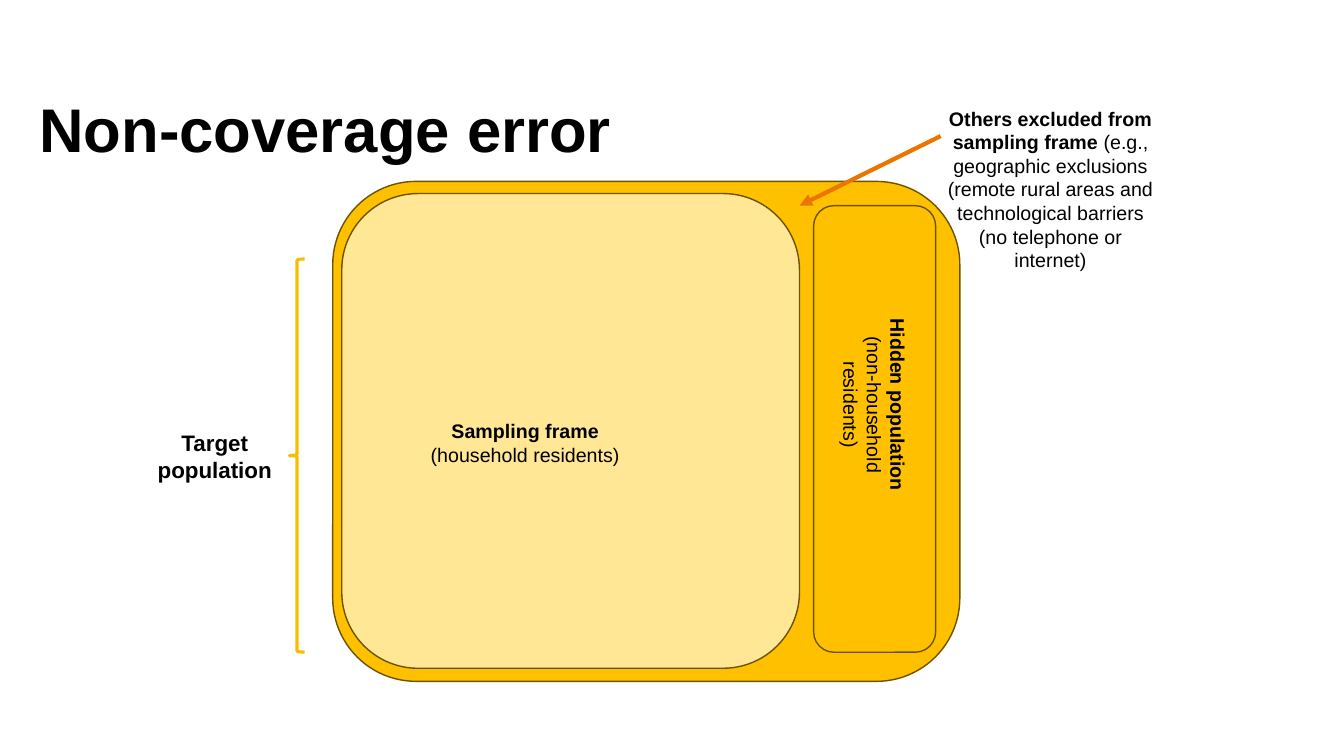
from lxml import etree
from pptx import Presentation
from pptx import util as u
from pptx.dml.color import RGBColor
from pptx.enum import shapes, text
from pptx.oxml import ns

WIDE, HIGH = u.Inches(13.33), u.Inches(7.5)
BLACK = RGBColor(0x00, 0x00, 0x00)
GOLD = RGBColor(0xFF, 0xC0, 0x00)
PALE = RGBColor(0xFF, 0xE7, 0x95)
BROWN = RGBColor(0x6C, 0x53, 0x00)
AMBER = RGBColor(0xF6, 0xBE, 0x00)
ORANGE = RGBColor(0xEA, 0x76, 0x00)
ROUND = shapes.MSO_SHAPE.ROUNDED_RECTANGLE
BRACE = shapes.MSO_SHAPE.LEFT_BRACE


def place(x, y):
    return round(WIDE * x / 100), round(HIGH * y / 100)


def box(x, y, wide, high):
    return place(x, y) + place(wide, high)


def style(font, size):
    font.name = "Arial"
    font.size = u.Pt(size)
    font.color.rgb = BLACK


def add_title(slide, words, area):
    title = slide.shapes.title
    title.left, title.top, title.width, title.height = area
    frame = title.text_frame
    frame.text = words
    frame.word_wrap = True
    frame.auto_size = text.MSO_AUTO_SIZE.NONE
    frame.vertical_anchor = text.MSO_ANCHOR.TOP
    frame.margin_left = frame.margin_right = 0
    frame.margin_top = frame.margin_bottom = 0
    para = frame.paragraphs[0]
    para.alignment = text.PP_ALIGN.LEFT
    para.line_spacing = 0.9
    style(para.font, 44)
    para.font.bold = True


def add_form(slide, kind, area, fill, line, width):
    form = slide.shapes.add_shape(kind, *area)
    form.shadow.inherit = False
    if fill is None:
        form.fill.background()
    else:
        form.fill.solid()
        form.fill.fore_color.rgb = fill
    form.line.color.rgb = line
    form.line.width = u.Pt(width)


def add_label(slide, area, head, rest="", size=14, turn=0):
    label = slide.shapes.add_textbox(*area)
    label.rotation = turn
    frame = label.text_frame
    frame.word_wrap = True
    frame.auto_size = text.MSO_AUTO_SIZE.SHAPE_TO_FIT_TEXT
    para = frame.paragraphs[0]
    para.alignment = text.PP_ALIGN.CENTER
    style(para.font, size)
    for words, bold in ((head, True), (rest, False)):
        if words:
            run = para.add_run()
            run.text = words
            run.font.bold = bold


def add_arrow(slide, start, end):
    arrow = slide.shapes.add_connector(
        shapes.MSO_CONNECTOR.STRAIGHT, *start, *end)
    arrow.line.color.rgb = ORANGE
    arrow.line.width = u.Pt(3)
    tip = etree.SubElement(arrow.line._get_or_add_ln(), ns.qn("a:tailEnd"))
    tip.set("type", "triangle")
    etree.SubElement(arrow._element.spPr, ns.qn("a:effectLst"))


def main():
    deck = Presentation()
    deck.slide_width, deck.slide_height = WIDE, HIGH
    slide = deck.slides.add_slide(deck.slide_layouts[5])
    add_title(slide, "Non-coverage error", box(2.93, 13.07, 73.82, 20))
    add_form(slide, ROUND, box(24.76, 24, 46.66, 66.13), GOLD, BROWN, 1)
    add_form(slide, ROUND, box(25.43, 25.6, 34.06, 62.8), PALE, BROWN, 1)
    add_label(slide, box(10.28, 56.13, 11.4, 8.53),
              "Target population", size=16)
    add_label(slide, box(30.68, 54.8, 16.8, 7.6),
              "Sampling frame ", "(household residents)")
    add_form(slide, BRACE, box(21.53, 34.27, 1.13, 52), None, AMBER, 2.25)
    add_arrow(slide, place(69.99, 18), place(59.49, 27.2))
    add_label(slide, box(69.54, 13.47, 17.25, 23.33),
              "Others excluded from sampling frame ",
              "(e.g., geographic exclusions (remote rural areas and "
              "technological barriers (no telephone or internet)")
    add_form(slide, ROUND, box(60.54, 27.2, 9.08, 59.07), GOLD, BROWN, 1)
    add_label(slide, box(56.64, 48.13, 16.8, 10.8),
              "Hidden population ", "(non-household residents)", turn=90)
    deck.save("out.pptx")


if __name__ == "__main__":
    main()
